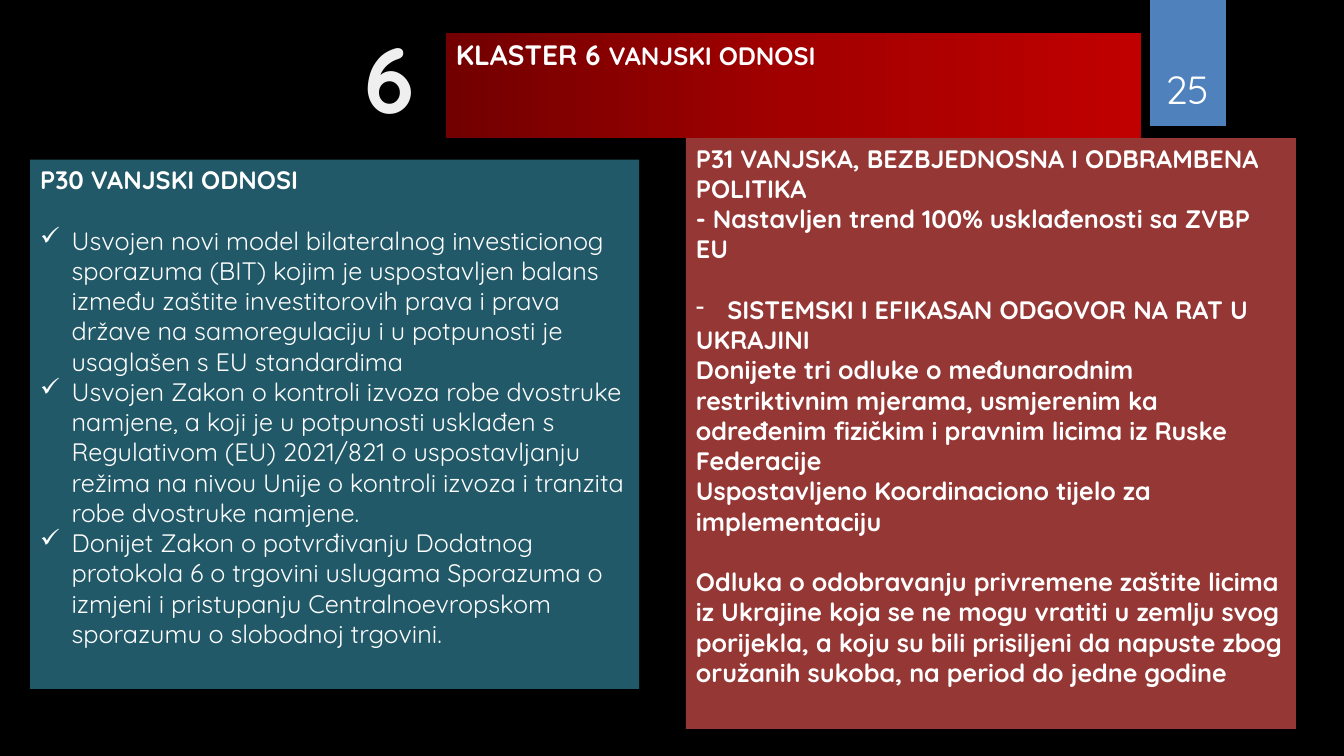
"""Build the cluster 6 slide with its header and two chapter panels."""
from dataclasses import dataclass

from lxml import etree
from pptx import Presentation
from pptx import oxml
from pptx import util as u
from pptx.dml.color import RGBColor
from pptx.enum import shapes, text
from pptx.oxml import ns

FONT = "Quicksand"
BLACK = RGBColor(0x00, 0x00, 0x00)
WHITE = RGBColor(0xFF, 0xFF, 0xFF)
NEAR_WHITE = RGBColor(0xFC, 0xFC, 0xFD)
NAVY = RGBColor(0x10, 0x1A, 0x26)
BLUE = RGBColor(0x4F, 0x81, 0xBD)
TEAL = RGBColor(0x21, 0x59, 0x68)
BRICK = RGBColor(0x95, 0x37, 0x35)
HEADER_STOPS = (
    (0, RGBColor(0x72, 0x00, 0x00)),
    (50, RGBColor(0xA2, 0x00, 0x00)),
    (100, RGBColor(0xC0, 0x00, 0x00)),
)
PLAIN_TABLE_STYLE = "{2D5ABB26-0587-4C30-8999-92F81FD0307C}"
BODY_SIZE = 18
LINE_GAP = 21.6
INDENT = 22.5


@dataclass(frozen=True)
class Box:
    left: float
    top: float
    width: float
    height: float

    def lengths(self) -> tuple:
        return u.Pt(self.left), u.Pt(self.top), u.Pt(self.width), u.Pt(self.height)


@dataclass(frozen=True)
class Line:
    wording: str
    bold: bool = True
    bullet: str = ""
    gap: bool = False


@dataclass(frozen=True)
class Panel:
    box: Box
    color: RGBColor
    lines: tuple


PANELS = (
    Panel(Box(21.6, 114, 434.9, 378), TEAL, (
        Line("P30 VANJSKI ODNOSI"),
        Line("Usvojen novi model bilateralnog investicionog sporazuma (BIT) kojim je "
             "uspostavljen balans između zaštite investitorovih prava i prava države na "
             "samoregulaciju i u potpunosti je usaglašen s EU standardima",
             bold=False, bullet="✓", gap=True),
        Line("Usvojen Zakon o kontroli izvoza robe dvostruke namjene, a koji je u "
             "potpunosti usklađen s Regulativom (EU) 2021/821 o uspostavljanju režima na "
             "nivou Unije o kontroli izvoza i tranzita robe dvostruke namjene.",
             bold=False, bullet="✓"),
        Line("Donijet Zakon o potvrđivanju Dodatnog protokola 6 o trgovini uslugama "
             "Sporazuma o izmjeni i pristupanju Centralnoevropskom sporazumu o slobodnoj "
             "trgovini.", bold=False, bullet="✓"),
    )),
    Panel(Box(490, 98.6, 435.6, 422), BRICK, (
        Line("P31 VANJSKA, BEZBJEDNOSNA I ODBRAMBENA POLITIKA"),
        Line("- Nastavljen trend 100% usklađenosti sa ZVBP EU"),
        Line("SISTEMSKI I EFIKASAN ODGOVOR NA RAT U", bullet="-", gap=True),
        Line("UKRAJINI"),
        Line("Donijete tri odluke o međunarodnim restriktivnim mjerama, usmjerenim ka "
             "određenim fizičkim i pravnim licima iz Ruske Federacije"),
        Line("Uspostavljeno Koordinaciono tijelo za implementaciju"),
        Line("Odluka o odobravanju privremene zaštite licima iz Ukrajine koja se ne mogu "
             "vratiti u zemlju svog porijekla, a koju su bili prisiljeni da napuste zbog "
             "oružanih sukoba, na period do jedne godine", gap=True),
    )),
)


def style(font, size: float, bold: bool, color: RGBColor = WHITE) -> None:
    font.name = FONT
    font.size = u.Pt(size)
    font.bold = bold
    font.color.rgb = color


def add_block(slide, box: Box, color: RGBColor):
    block = slide.shapes.add_shape(shapes.MSO_SHAPE.RECTANGLE, *box.lengths())
    block.shadow.inherit = False
    block.fill.solid()
    block.fill.fore_color.rgb = color
    block.line.fill.background()
    return block


def add_label(slide, box: Box, wording: str, size: float, bold: bool, color: RGBColor):
    label = slide.shapes.add_textbox(*box.lengths())
    label.text_frame.text = wording
    paragraph = label.text_frame.paragraphs[0]
    paragraph.alignment = text.PP_ALIGN.CENTER
    style(paragraph.runs[0].font, size, bold, color)
    return label


def add_panel(slide, panel: Panel) -> None:
    frame = add_block(slide, panel.box, panel.color).text_frame
    frame.word_wrap = True
    frame.vertical_anchor = text.MSO_ANCHOR.TOP
    frame.text = "\n".join(line.wording for line in panel.lines)
    for paragraph, line in zip(frame.paragraphs, panel.lines):
        paragraph.alignment = text.PP_ALIGN.LEFT
        if line.gap:
            paragraph.space_before = u.Pt(LINE_GAP)
        if line.bullet:
            properties = paragraph._p.get_or_add_pPr()
            properties.set("marL", str(u.Pt(INDENT)))
            properties.set("indent", str(-u.Pt(INDENT)))
            etree.SubElement(properties, ns.qn("a:buChar"), char=line.bullet)
        style(paragraph.runs[0].font, BODY_SIZE, line.bold)


def add_header(slide, box: Box) -> None:
    table = slide.shapes.add_table(1, 1, *box.lengths()).table
    table.first_row = table.horz_banding = False
    table._tbl.tblPr.find(ns.qn("a:tableStyleId")).text = PLAIN_TABLE_STYLE
    cell = table.cell(0, 0)
    stops = "".join(
        f'<a:gs pos="{position * 1000}"><a:srgbClr val="{color}"/></a:gs>'
        for position, color in HEADER_STOPS
    )
    cell._tc.get_or_add_tcPr().append(oxml.parse_xml(
        f'<a:gradFill {ns.nsdecls("a")}><a:gsLst>{stops}</a:gsLst>'
        '<a:lin ang="0" scaled="0"/></a:gradFill>'
    ))
    paragraph = cell.text_frame.paragraphs[0]
    for wording, size in (("KLASTER 6 ", 20), ("VANJSKI ODNOSI", 18)):
        run = paragraph.add_run()
        run.text = wording
        style(run.font, size, True)


def add_cluster_digit(slide, box: Box) -> None:
    digit = add_label(slide, box, "6", 66, True, NEAR_WHITE)
    digit.text_frame.word_wrap = False
    properties = digit.text_frame.paragraphs[0].runs[0]._r.get_or_add_rPr()
    properties.set("spc", "50")
    color = properties.find(f'{ns.qn("a:solidFill")}/{ns.qn("a:srgbClr")}')
    etree.SubElement(color, ns.qn("a:alpha"), val="95000")
    properties.insert(0, oxml.parse_xml(
        f'<a:ln {ns.nsdecls("a")} w="{u.Pt(1.06)}"><a:solidFill><a:srgbClr val="{NAVY}">'
        '<a:alpha val="6000"/></a:srgbClr></a:solidFill></a:ln>'
    ))


def main() -> None:
    deck = Presentation()
    deck.slide_width, deck.slide_height = u.Pt(960), u.Pt(540)
    slide = deck.slides.add_slide(deck.slide_layouts[6])
    slide.background.fill.solid()
    slide.background.fill.fore_color.rgb = BLACK

    add_block(slide, Box(821.6, 0, 54, 90), BLUE)
    page_number = add_label(slide, Box(815, 23, 66, 60.5), "25", 28, False, WHITE)
    page_number.text_frame.word_wrap = True
    page_number.text_frame.vertical_anchor = text.MSO_ANCHOR.BOTTOM
    add_header(slide, Box(318.4, 23.4, 496.8, 75.2))
    add_cluster_digit(slide, Box(252, 11.5, 52.5, 87))
    for panel in PANELS:
        add_panel(slide, panel)
    deck.save("out.pptx")


if __name__ == "__main__":
    main()
